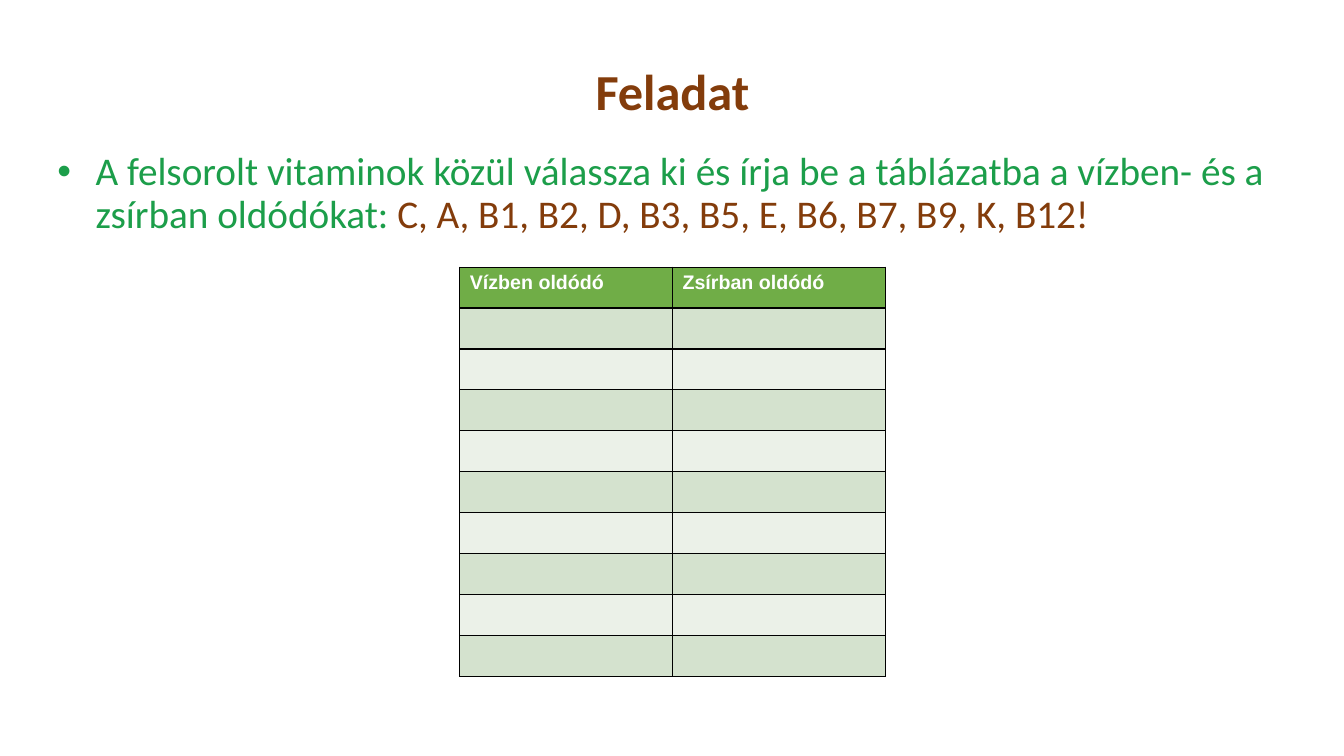
from pptx import Presentation
from pptx.dml.color import RGBColor
from pptx.enum.text import MSO_ANCHOR as Anchor, PP_ALIGN as Align
from pptx.oxml import parse_xml
from pptx.oxml.ns import nsdecls
from pptx.util import Inches, Pt

HUES = {"brown": "833C0B", "green": "1C9E4A", "head": "70AD47", "dark": "D4E2CE",
        "light": "EBF1E8", "white": "FFFFFF", "black": "000000"}
TITLE = "Feladat"
TASK = [
    ("A felsorolt vitaminok közül válassza ki és írja be a táblázatba a vízben- és a zsírban oldódókat: ", "green"),
    ("C, A, B1, B2, D, B3, B5, E, B6, B7, B9, K, B12!", "brown"),
]
HEADS = ["Vízben oldódó", "Zsírban oldódó"]
ROWS, COL_W, ROW_H = 10, 2.11, 0.406
LEFT, WIDTH = 0.35, 12.64
TABLE_X, TABLE_Y = 4.56, 2.65


def write(frame, runs, size, font="Calibri", bold=False, align=Align.LEFT,
          anchor=Anchor.TOP, spacing=None, bullet=None):
    """Fill a text frame with one paragraph of coloured runs."""
    frame.word_wrap = True
    frame.vertical_anchor = anchor
    par = frame.paragraphs[0]
    if bullet:
        props = par._p.get_or_add_pPr()
        props.set("marL", str(Inches(0.5)))
        props.set("indent", str(Inches(-0.38)))
        props.append(parse_xml(f'<a:buClr {nsdecls("a")}><a:srgbClr val="{HUES[bullet]}"/></a:buClr>'))
        props.append(parse_xml(f'<a:buFont {nsdecls("a")} typeface="Arial"/>'))
        props.append(parse_xml(f'<a:buChar {nsdecls("a")} char="•"/>'))
    par.alignment = align
    if spacing:
        par.line_spacing = spacing
    for text, hue in runs:
        run = par.add_run()
        run.text = text
        run.font.name = font
        run.font.size = Pt(size)
        run.font.bold = bold
        run.font.color.rgb = RGBColor.from_string(HUES[hue])


def paint(cell, hue):
    """Give a cell thin black borders and a solid fill."""
    props = cell._tc.get_or_add_tcPr()
    for side in ("lnL", "lnR", "lnT", "lnB"):
        props.append(parse_xml(
            f'<a:{side} {nsdecls("a")} w="{Pt(1)}"><a:solidFill>'
            f'<a:srgbClr val="{HUES["black"]}"/></a:solidFill></a:{side}>'))
    cell.fill.solid()
    cell.fill.fore_color.rgb = RGBColor.from_string(HUES[hue])


def add_box(slide, top, height):
    """Add a full-width text box and return its frame."""
    return slide.shapes.add_textbox(
        Inches(LEFT), Inches(top), Inches(WIDTH), Inches(height)).text_frame


def add_grid(slide):
    """Add the answer table with a header and banded rows."""
    grid = slide.shapes.add_table(
        ROWS, len(HEADS), Inches(TABLE_X), Inches(TABLE_Y),
        Inches(COL_W * len(HEADS)), Inches(ROW_H * ROWS)).table
    for row in range(ROWS):
        hue = "head" if row == 0 else ("light", "dark")[row % 2]
        for col in range(len(HEADS)):
            paint(grid.cell(row, col), hue)
    for col, head in enumerate(HEADS):
        write(grid.cell(0, col).text_frame, [(head, "white")], 14, font="Arial", bold=True)


def main():
    """Build and save the slide."""
    deck = Presentation()
    deck.slide_width, deck.slide_height = Inches(13.33), Inches(7.5)
    slide = deck.slides.add_slide(deck.slide_layouts[6])
    write(add_box(slide, 0.4, 1.06), [(TITLE, "brown")], 36, bold=True,
          align=Align.CENTER, anchor=Anchor.MIDDLE, spacing=0.9)
    write(add_box(slide, 1.46, 4.76), TASK, 28, spacing=0.9, bullet="green")
    add_grid(slide)
    deck.save("out.pptx")


if __name__ == "__main__":
    main()
